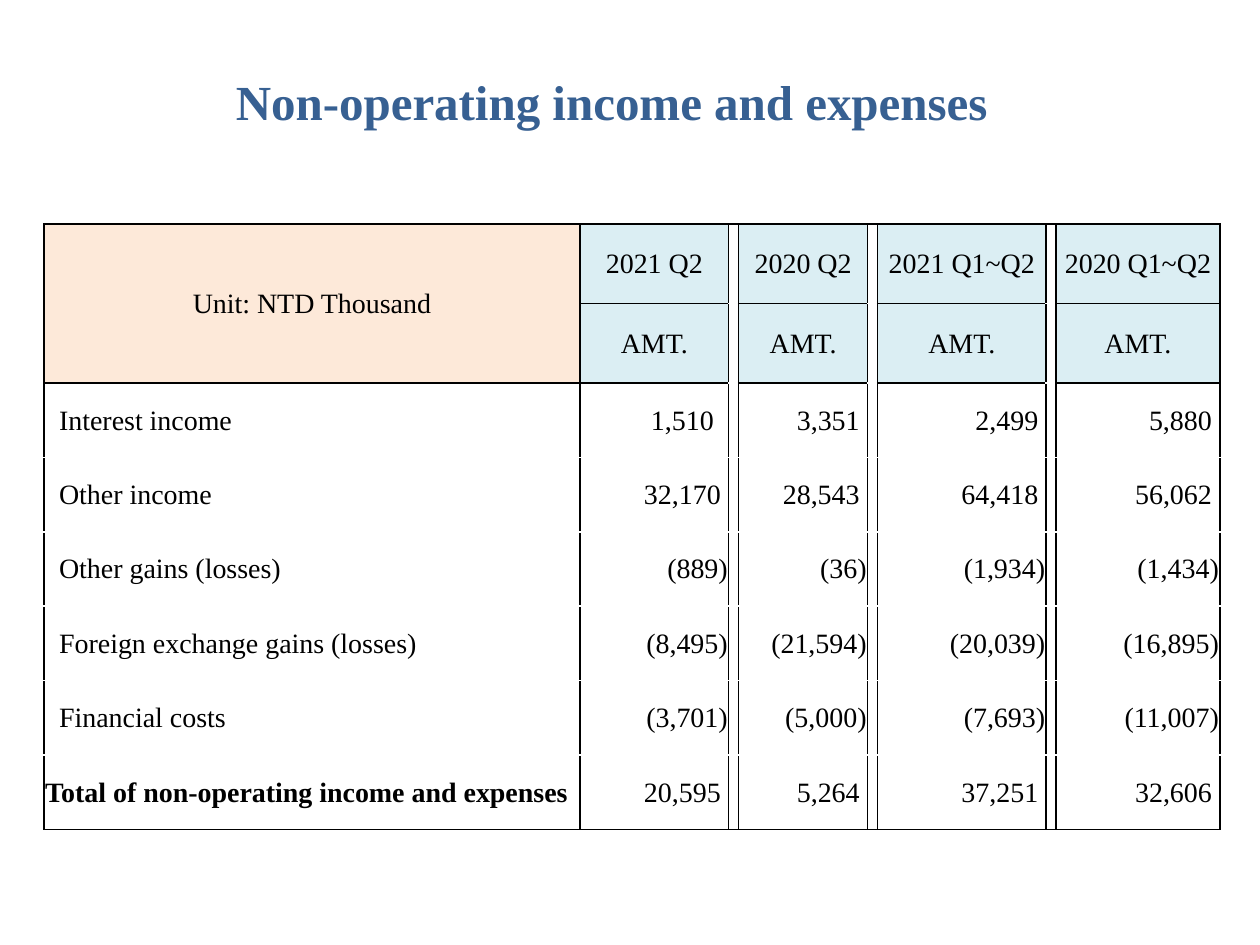
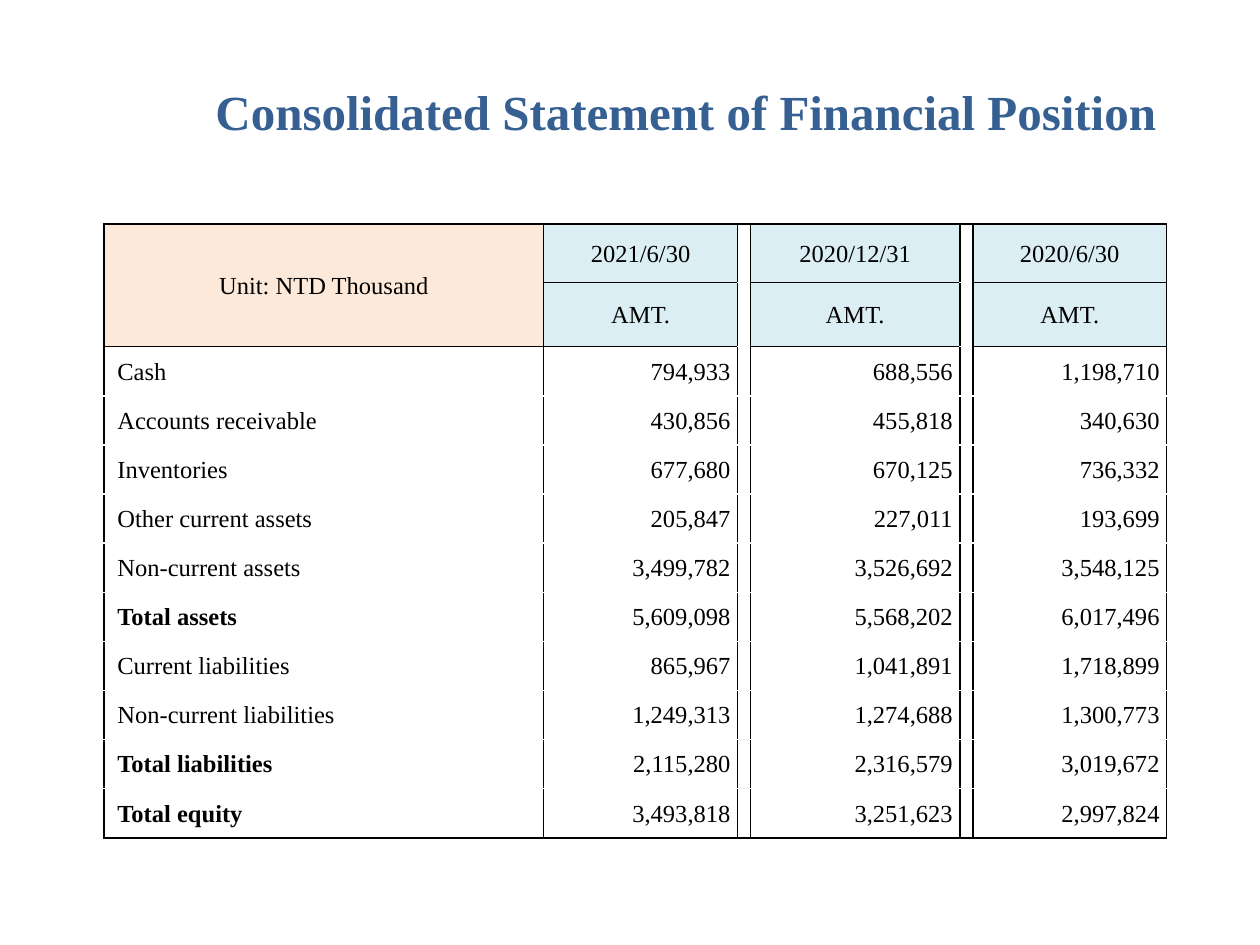
"""Build two financial slides: non-operating items and financial position."""
from dataclasses import dataclass, field

from lxml.etree import SubElement
from pptx import Presentation
from pptx.dml.color import RGBColor
from pptx.enum.text import MSO_ANCHOR, MSO_AUTO_SIZE, PP_ALIGN
from pptx.oxml.ns import qn
from pptx.util import Cm, Pt

FONT = "Times New Roman"
TITLE_BLUE, BLACK = "376092", "000000"
UNIT_PEACH, PERIOD_BLUE = "FDE9D9", "DBEEF3"
UNIT_LABEL, AMOUNT_LABEL = "Unit: NTD Thousand", "AMT."
TABLE_TOP = 4.52
CELL_MARGIN = 0.02
CM_PER_POINT = 2.54 / 72
HEADER_ROWS = 2


@dataclass
class Statement:
    """One financial table; lengths in cm, text size in points."""
    title: str
    title_box: tuple
    left: float
    label_width: float
    period_widths: tuple
    gap_width: float
    header_heights: tuple
    row_height: float
    text_size: int
    periods: tuple
    items: tuple
    indents: dict = field(default_factory=dict)


NON_OPERATING = Statement(
    title="Non-operating income and expenses",
    title_box=(4.5, 1.32, 20.6, 2.44),
    left=0.89, label_width=10.8, period_widths=(3, 2.6, 3.4, 3.3), gap_width=0.2,
    header_heights=(1.6, 1.6), row_height=1.5, text_size=16,
    periods=("2021 Q2", "2020 Q2", "2021 Q1~Q2", "2020 Q1~Q2"),
    items=(
        ("Interest income", "1,510", "3,351", "2,499", "5,880"),
        ("Other income", "32,170", "28,543", "64,418", "56,062"),
        ("Other gains (losses)", "(889)", "(36)", "(1,934)", "(1,434)"),
        ("Foreign exchange gains (losses)", "(8,495)", "(21,594)", "(20,039)", "(16,895)"),
        ("Financial costs", "(3,701)", "(5,000)", "(7,693)", "(11,007)"),
        ("Total of non-operating income and expenses", "20,595", "5,264", "37,251", "32,606"),
    ),
    indents={"1,510": 2, "Total of non-operating income and expenses": 0},
)

FINANCIAL_POSITION = Statement(
    title="Consolidated Statement of Financial Position",
    title_box=(4.09, 1.52, 20, 3.18),
    left=2.1, label_width=8.86, period_widths=(3.91, 4.22, 3.91), gap_width=0.26,
    header_heights=(1.17, 1.3), row_height=0.99, text_size=14,
    periods=("2021/6/30", "2020/12/31", "2020/6/30"),
    items=(
        ("Cash", "794,933", "688,556", "1,198,710"),
        ("Accounts receivable", "430,856", "455,818", "340,630"),
        ("Inventories", "677,680", "670,125", "736,332"),
        ("Other current assets", "205,847", "227,011", "193,699"),
        ("Non-current assets", "3,499,782", "3,526,692", "3,548,125"),
        ("Total assets", "5,609,098", "5,568,202", "6,017,496"),
        ("Current liabilities", "865,967", "1,041,891", "1,718,899"),
        ("Non-current liabilities", "1,249,313", "1,274,688", "1,300,773"),
        ("Total liabilities", "2,115,280", "2,316,579", "3,019,672"),
        ("Total equity", "3,493,818", "3,251,623", "2,997,824"),
    ),
)


def color(hex_value):
    """Turn a hex string into a colour."""
    return RGBColor.from_string(hex_value)


def format_runs(paragraph, size, hex_value, bold=False):
    """Give every run of a paragraph the shared font."""
    for run in paragraph.runs:
        run.font.name = FONT
        run.font.size = Pt(size)
        run.font.bold = bold
        run.font.color.rgb = color(hex_value)


def add_title(slide, text, box):
    """Place and style the slide title."""
    title = slide.shapes.title
    title.left, title.top, title.width, title.height = map(Cm, box)
    frame = title.text_frame
    frame.text = text
    frame.word_wrap = True
    frame.auto_size = MSO_AUTO_SIZE.NONE
    frame.vertical_anchor = MSO_ANCHOR.TOP
    frame.paragraphs[0].alignment = PP_ALIGN.LEFT
    format_runs(frame.paragraphs[0], 28, TITLE_BLUE, bold=True)


def draw_borders(cell, sides):
    """Draw one-point black lines on the given sides, listed in LRTB order."""
    properties = cell._tc.get_or_add_tcPr()
    for side in sides:
        line = SubElement(properties, qn(f"a:ln{side}"), w=str(Pt(1)))
        fill = SubElement(line, qn("a:solidFill"))
        SubElement(fill, qn("a:srgbClr"), val=BLACK)


def border_sides(row, column, last_row):
    """Say which sides of a cell are ruled; gap columns stay open inside."""
    is_gap = column > 0 and column % 2 == 0
    top = row == 0 or (row <= HEADER_ROWS and not is_gap)
    bottom = row == last_row or (row < HEADER_ROWS and not is_gap)
    return "LR" + "T" * top + "B" * bottom


def prepare_cells(table):
    """Rule, clear and tighten every cell."""
    last_row = len(table.rows) - 1
    for row in range(last_row + 1):
        for column in range(len(table.columns)):
            cell = table.cell(row, column)
            draw_borders(cell, border_sides(row, column, last_row))
            cell.fill.background()
            cell.vertical_anchor = MSO_ANCHOR.MIDDLE
            cell.margin_left = cell.margin_right = cell.margin_top = Cm(CELL_MARGIN)
            cell.margin_bottom = 0


def write_cell(cell, text, size, alignment, bold=False):
    """Write one formatted line in a cell."""
    paragraph = cell.text_frame.paragraphs[0]
    paragraph.text = text
    paragraph.alignment = alignment
    format_runs(paragraph, size, BLACK, bold)


def write_header(cell, text, size, fill):
    """Write a centred header on a coloured fill."""
    write_cell(cell, text, size, PP_ALIGN.CENTER)
    cell.fill.solid()
    cell.fill.fore_color.rgb = color(fill)


def write_item(table, row, item, statement):
    """Write an item's label and its amounts, indented by space widths."""
    size = statement.text_size

    def indent(text, default):
        spaces = statement.indents.get(text, default)
        return Cm(CELL_MARGIN + spaces * size / 4 * CM_PER_POINT)

    label, *amounts = item
    label_cell = table.cell(row, 0)
    write_cell(label_cell, label, size, PP_ALIGN.LEFT, label.startswith("Total"))
    label_cell.margin_left = indent(label, 2)
    for position, amount in enumerate(amounts):
        amount_cell = table.cell(row, 2 * position + 1)
        write_cell(amount_cell, amount, size, PP_ALIGN.RIGHT)
        amount_cell.margin_right = indent(amount, 0 if amount.endswith(")") else 1)


def add_statement_table(slide, statement):
    """Add the table with narrow gap columns between the periods."""
    widths = [statement.label_width]
    for width in statement.period_widths:
        widths += [width, statement.gap_width]
    widths.pop()
    heights = [*statement.header_heights] + [statement.row_height] * len(statement.items)
    table = slide.shapes.add_table(
        len(heights), len(widths), Cm(statement.left), Cm(TABLE_TOP),
        Cm(sum(widths)), Cm(sum(heights))).table
    table.first_row = table.horz_banding = False
    for column, width in zip(table.columns, widths):
        column.width = Cm(width)
    for row, height in zip(table.rows, heights):
        row.height = Cm(height)

    prepare_cells(table)
    table.cell(0, 0).merge(table.cell(1, 0))
    write_header(table.cell(0, 0), UNIT_LABEL, statement.text_size, UNIT_PEACH)
    for position, period in enumerate(statement.periods):
        for row, text in enumerate((period, AMOUNT_LABEL)):
            write_header(table.cell(row, 2 * position + 1), text,
                         statement.text_size, PERIOD_BLUE)
    for row, item in enumerate(statement.items, start=HEADER_ROWS):
        write_item(table, row, item, statement)


def main():
    """Build and save the presentation."""
    presentation = Presentation()
    presentation.slide_width, presentation.slide_height = Cm(25.4), Cm(19.05)
    title_only = presentation.slide_layouts[5]
    for statement in (NON_OPERATING, FINANCIAL_POSITION):
        slide = presentation.slides.add_slide(title_only)
        add_title(slide, statement.title, statement.title_box)
        add_statement_table(slide, statement)
    presentation.save("out.pptx")


if __name__ == "__main__":
    main()
